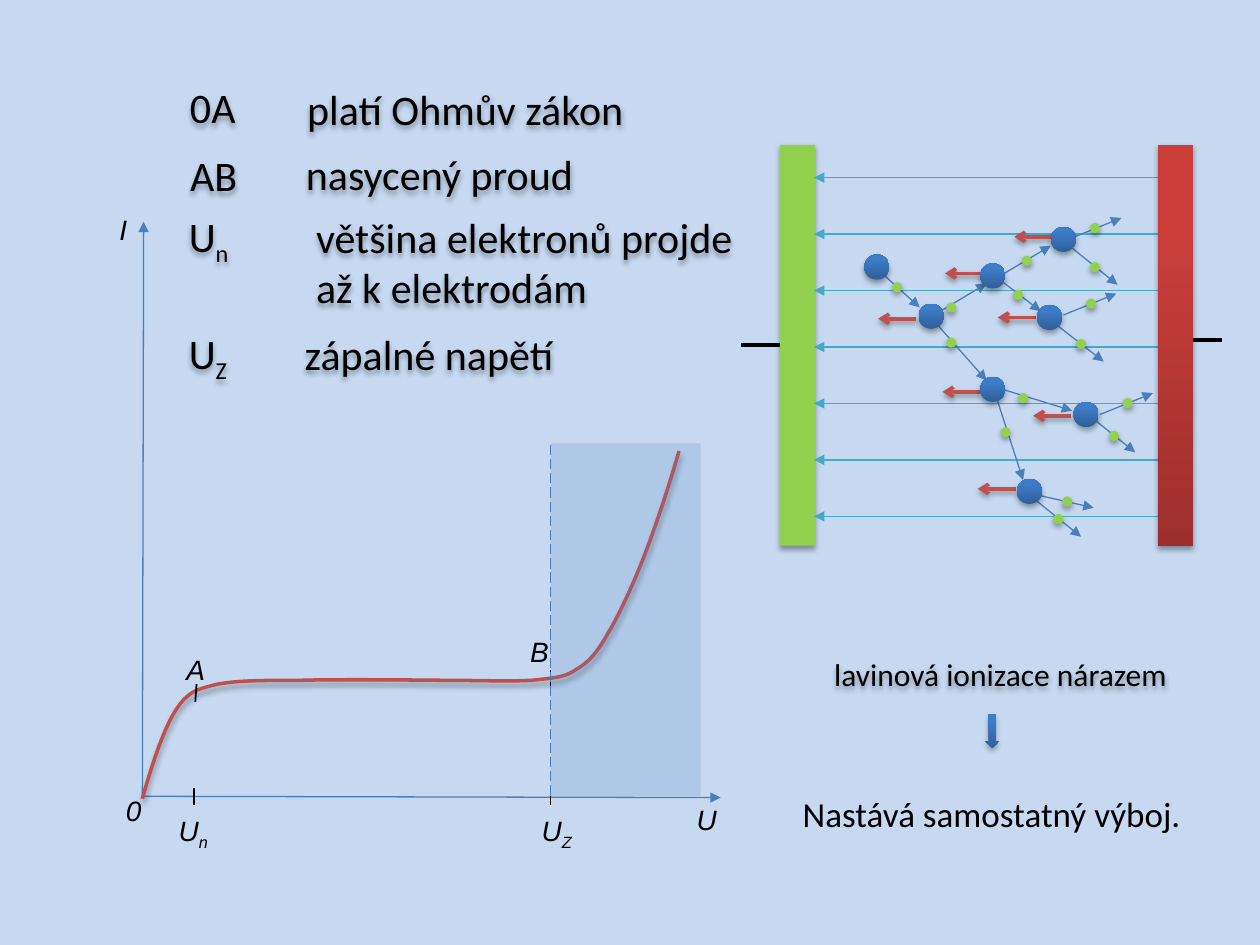
from pptx import Presentation
from pptx.dml.color import RGBColor
from pptx.enum.dml import MSO_LINE
from pptx.enum.shapes import MSO_CONNECTOR, MSO_SHAPE
from pptx.enum.text import MSO_ANCHOR, PP_ALIGN
from pptx.oxml.ns import qn
from pptx.oxml.xmlchemy import OxmlElement
from pptx.util import Cm, Pt

STRAIGHT = MSO_CONNECTOR.STRAIGHT
RECTANGLE, OVAL = MSO_SHAPE.RECTANGLE, MSO_SHAPE.OVAL
CALLOUT, DOWN_ARROW = MSO_SHAPE.ROUNDED_RECTANGULAR_CALLOUT, MSO_SHAPE.DOWN_ARROW
LEFT, CENTER = PP_ALIGN.LEFT, PP_ALIGN.CENTER
TOP, MIDDLE = MSO_ANCHOR.TOP, MSO_ANCHOR.MIDDLE

BACKGROUND = RGBColor(0xC6, 0xD9, 0xF1)
BLACK = RGBColor(0, 0, 0)
BLUE = RGBColor(0x4B, 0x7E, 0xBC)
BAND_BLUE = RGBColor(0x4F, 0x81, 0xBD)
RED = RGBColor(0xC0, 0x50, 0x4D)
GREEN = RGBColor(0x92, 0xD0, 0x50)
TEAL = RGBColor(0x46, 0xAA, 0xC5)
ATOM_BLUES = RGBColor(0x2F, 0x5F, 0x99), RGBColor(0x3D, 0x7C, 0xC7)
PLATE_REDS = RGBColor(0x9C, 0x2F, 0x2D), RGBColor(0xCB, 0x3E, 0x3A)

# All coordinates below are in inches; "_" starts a subscript.
AXIS_LABELS = [
    ("0", 0.9, 6.25, 0.33), ("U", 5.43, 6.32, 0.36), ("I", 0.85, 1.64, 0.27),
    ("U_n", 1.32, 6.41, 0.45), ("U_Z", 4.2, 6.41, 0.45),
    ("A", 1.38, 5.13, 0.35), ("B", 4.11, 4.99, 0.35),
]
LEGEND = [
    ("0A", 1.41, 0.6, 0.57), ("platí Ohmův zákon", 2.34, 0.61, 2.74),
    ("AB", 1.41, 1.14, 0.58), ("nasycený proud", 2.33, 1.13, 2.34),
    ("U_n", 1.4, 1.62, 0.52),
    ("většina elektronů projde\naž k elektrodám", 2.41, 1.63, 3.88),
    ("U_Z", 1.4, 2.55, 0.52), ("zápalné napětí", 2.32, 2.56, 2.2),
]
AXES = [((1.13, 6.33), (1.14, 1.76)), ((1.14, 6.32), (5.72, 6.33))]
TICKS = [((1.56, 5.43), (1.55, 5.57)), ((4.37, 5.32), (4.37, 5.46)),
         ((1.54, 6.25), (1.54, 6.39)), ((4.37, 6.25), (4.37, 6.39))]
CURVE_START = (1.13, 6.34)
CURVE_SEGMENTS = [  # two control points and the end of each Bézier segment
    ((1.21, 6.06), (1.3, 5.78), (1.4, 5.63)),
    ((1.5, 5.48), (1.57, 5.47), (1.73, 5.43)),
    ((1.9, 5.4), (2.09, 5.4), (2.39, 5.4)),
    ((2.68, 5.39), (3.51, 5.4), (3.51, 5.4)),
    ((3.81, 5.4), (4.04, 5.41), (4.22, 5.4)),
    ((4.4, 5.38), (4.48, 5.38), (4.58, 5.31)),
    ((4.68, 5.25), (4.74, 5.18), (4.83, 5.02)),
    ((4.92, 4.87), (5.04, 4.61), (5.13, 4.37)),
    ((5.22, 4.13), (5.31, 3.86), (5.39, 3.58)),
]
ELECTRONS = [  # start and end of the flight, left top corner of the electron
    ((7.33, 2.55), (7.83, 2.25), (7.51, 2.4)),
    ((7.38, 2.51), (7.83, 3.02), (7.51, 2.68)),
    ((7.87, 2.17), (8.26, 2.47), (8.04, 2.3)),
    ((7.92, 2.2), (8.34, 1.95), (8.11, 2.03)),
    ((7.86, 3.06), (8.51, 3.26), (8.08, 3.12)),
    ((7.91, 3.16), (8.12, 3.81), (7.94, 3.39)),
    ((8.48, 1.9), (8.9, 1.73), (8.65, 1.77)),
    ((8.51, 1.97), (8.87, 2.26), (8.65, 2.08)),
    ((8.44, 2.5), (8.86, 2.33), (8.62, 2.37)),
    ((8.4, 2.59), (8.76, 2.87), (8.54, 2.69)),
    ((8.66, 3.31), (9.01, 3.59), (8.8, 3.42)),
    ((8.24, 3.93), (8.68, 4.03), (8.43, 3.94)),
    ((8.22, 3.97), (8.58, 4.26), (8.36, 4.08)),
    ((8.73, 3.29), (9.15, 3.12), (8.91, 3.16)),
    ((6.99, 2.16), (7.3, 2.44), (7.08, 2.24)),
]
ION_ARROWS = [(7.27, 2.53), (7.8, 2.17), (7.78, 3.11), (8.06, 3.88),
              (8.5, 3.3), (8.22, 2.52), (8.35, 1.88)]
ATOMS = [(7.78, 2.09), (7.78, 2.99), (8.34, 1.8), (8.52, 3.19),
         (8.07, 3.8), (8.23, 2.42), (7.29, 2.41), (6.86, 2.02)]
FIELD_LINE_COUNT, FIELD_TOP, FIELD_STEP = 7, 1.41, 0.448


def length(inches):
    return Cm(inches * 2.54)


def add_child(parent, tag, **attributes):
    child = OxmlElement(tag)
    for name, value in attributes.items():
        child.set(name, str(value))
    parent.append(child)
    return child


def set_effects(shape, shadow=True):
    effects = add_child(shape._element.spPr, "a:effectLst")
    if shadow:
        outer = add_child(effects, "a:outerShdw", blurRad=Pt(3.1), dist=Pt(1.8),
                          dir=5400000, rotWithShape=0)
        add_child(add_child(outer, "a:srgbClr", val="000000"), "a:alpha", val=35000)


def add_line(shapes, start, end, color, width=0.75, head=None, dash=None, shadow=False):
    line = shapes.add_connector(STRAIGHT, *map(length, start + end))
    line.line.color.rgb = color
    line.line.width = Pt(width)
    if dash:
        line.line.dash_style = dash
    if head:
        add_child(line._element.spPr.find(qn("a:ln")), "a:tailEnd", type=head)
    set_effects(line, shadow)
    return line


def add_filled(shapes, kind, box, colors, shadow=True, alpha=None):
    """Add a shape with one colour, or with a gradient from bottom to top."""
    shape = shapes.add_shape(kind, *map(length, box))
    shape.line.fill.background()
    if isinstance(colors, RGBColor):
        shape.fill.solid()
        shape.fill.fore_color.rgb = colors
    else:
        shape.fill.gradient()
        shape.fill.gradient_angle = 90
        for stop, color, position in zip(shape.fill.gradient_stops, colors, (0, 0.8)):
            stop.color.rgb = color
            stop.position = position
    if alpha:
        color = shape._element.spPr.find(qn("a:solidFill"))[0]
        add_child(color, "a:alpha", val=alpha * 1000)
    set_effects(shape, shadow)
    return shape


def write_text(shape, text, size, font="Calibri", italic=False, wrap=False,
               align=LEFT, anchor=TOP):
    frame = shape.text_frame
    frame.word_wrap = wrap
    frame.vertical_anchor = anchor
    paragraph = frame.paragraphs[0]
    paragraph.alignment = align
    for line_number, line in enumerate(text.split("\n")):
        if line_number:
            paragraph.add_line_break()
        for is_subscript, part in enumerate(line.split("_")):
            run = paragraph.add_run()
            run.text = part
            run.font.size, run.font.name, run.font.italic = Pt(size), font, italic
            run.font.color.rgb = BLACK
            if is_subscript:
                run._r.get_or_add_rPr().set("baseline", "-25000")
    return paragraph


def add_text(shapes, box, text, size, shadow=False, **text_format):
    text_box = shapes.add_textbox(*map(length, box))
    set_effects(text_box, shadow)
    return write_text(text_box, text, size, **text_format)


def curve_points(steps=10):
    start = CURVE_START
    for first, second, end in CURVE_SEGMENTS:
        for step in range(1, steps + 1):
            t = step / steps
            u = 1 - t
            yield tuple(length(u**3 * a + 3 * u * u * t * b + 3 * u * t * t * c + t**3 * d)
                        for a, b, c, d in zip(start, first, second, end))
        start = end


def draw_characteristic(shapes):
    for start, end in AXES:
        add_line(shapes, start, end, BLUE, head="triangle")
    for text, left, top, width in AXIS_LABELS:
        add_text(shapes, (left, top, width, 0.37), text, 16, font="Arial", italic=True)
    builder = shapes.build_freeform(*map(length, CURVE_START))
    builder.add_line_segments(list(curve_points()), close=False)
    curve = builder.convert_to_shape()
    curve.fill.background()
    curve.line.color.rgb = RED
    curve.line.width = Pt(2)
    set_effects(curve)
    for start, end in TICKS:
        add_line(shapes, start, end, BLACK, width=1)
    add_line(shapes, (4.37, 3.53), (4.37, 6.33), BLUE, dash=MSO_LINE.LONG_DASH)
    add_filled(shapes, RECTANGLE, (4.37, 3.52, 1.19, 2.8), BAND_BLUE, shadow=False, alpha=19)


def draw_discharge(shapes):
    left_lead = add_line(shapes, (5.88, 2.74), (6.19, 2.74), BLACK, width=2.25)
    add_line(shapes, (9.38, 2.7), (9.7, 2.7), BLACK, width=2.25)
    left_plate = add_filled(shapes, RECTANGLE, (6.19, 1.15, 0.28, 3.18), GREEN)
    left_lead.end_connect(left_plate, 1)
    for index in range(FIELD_LINE_COUNT):
        y = FIELD_TOP + index * FIELD_STEP
        add_line(shapes, (9.25, y), (6.46, y), TEAL, head="triangle")
    add_filled(shapes, RECTANGLE, (9.19, 1.15, 0.28, 3.18), PLATE_REDS)
    for x, y in ION_ARROWS:
        add_line(shapes, (x, y), (x - 0.3, y), RED, width=2, head="arrow", shadow=True)
    for start, end, corner in ELECTRONS:
        add_line(shapes, start, end, BLUE, head="triangle")
        add_filled(shapes, OVAL, corner + (0.08, 0.08), GREEN)
    for corner in ATOMS:
        add_filled(shapes, OVAL, corner + (0.2, 0.2), ATOM_BLUES)


def draw_conclusion(shapes):
    callout = shapes.add_shape(CALLOUT, *map(length, (6.33, 5.08, 3.22, 0.54)))
    for index, value in enumerate((-0.76, -1.49, 0.17)):
        callout.adjustments[index] = value
    callout.fill.background()
    callout.line.fill.background()
    set_effects(callout)
    write_text(callout, "lavinová ionizace nárazem", 18, wrap=True, align=CENTER, anchor=MIDDLE)
    add_filled(shapes, DOWN_ARROW, (7.82, 5.67, 0.11, 0.27), ATOM_BLUES)
    paragraph = add_text(shapes, (6.01, 6.07, 3.72, 0.62), "Nastává samostatný výboj.",
                         20, wrap=True, align=CENTER)
    paragraph.line_spacing = 1.5
    paragraph.space_before = Pt(5.8)


def main():
    presentation = Presentation()
    presentation.slide_width, presentation.slide_height = Cm(25.4), Cm(19.05)
    slide = presentation.slides.add_slide(presentation.slide_layouts[6])
    slide.background.fill.solid()
    slide.background.fill.fore_color.rgb = BACKGROUND
    draw_characteristic(slide.shapes)
    draw_discharge(slide.shapes)
    draw_conclusion(slide.shapes)
    for text, left, top, width in LEGEND:
        height = 0.91 if "\n" in text else 0.5
        add_text(slide.shapes, (left, top, width, height), text, 24, shadow=True)
    presentation.save("out.pptx")


if __name__ == "__main__":
    main()
